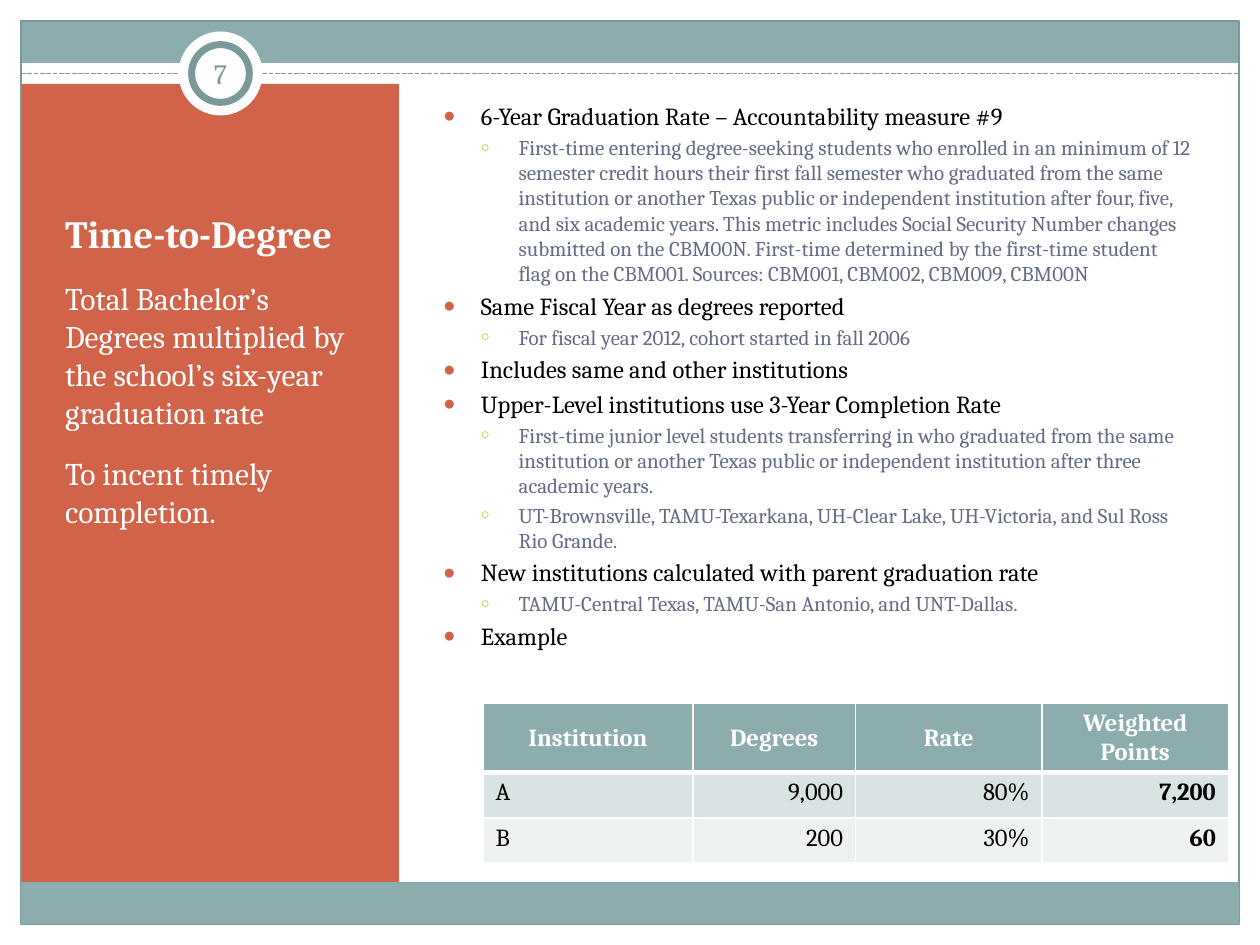
"""Builds the Time-to-Degree slide: caption panel, bulleted notes and an example table."""
import pptx
import pptx.dml.color
import pptx.enum.dml
import pptx.enum.shapes
import pptx.enum.text
import pptx.oxml
import pptx.oxml.ns
import pptx.util

THEME = {
    "font": "Cambria",
    "white": "FFFFFF", "black": "000000", "teal": "8CADAE", "dark teal": "7C999A",
    "orange": "D16349", "gold": "CCB400", "slate": "646B86",
    "rows": ["8CADAE", "DAE3E3", "EEF1F2"],
    "title": 22, "caption": 18, "number": 16, "list": 14, "detail": 12,
}
COLUMNS, ROWS = 120, 90
SHAPE = pptx.enum.shapes.MSO_SHAPE
ALIGN = pptx.enum.text.PP_ALIGN
ANCHOR = pptx.enum.text.MSO_ANCHOR
rgb = pptx.dml.color.RGBColor.from_string

deck = pptx.Presentation()
deck.slide_width = pptx.util.Inches(10)
deck.slide_height = pptx.util.Inches(7.5)
column = deck.slide_width / COLUMNS
row = deck.slide_height / ROWS
page = deck.slides.add_slide(deck.slide_layouts.get_by_name("Content with Caption"))


def grid(left, top, width, height):
    """Turn grid columns and rows into slide lengths."""
    return int(left * column), int(top * row), int(width * column), int(height * row)


def write(para, text, size, color, bold=False):
    """Add one formatted run to a paragraph."""
    span = para.add_run()
    span.text = text
    span.font.name = THEME["font"]
    span.font.size = pptx.util.Pt(size)
    span.font.color.rgb = rgb(THEME[color])
    span.font.bold = bold


shapes = [
    (SHAPE.RECTANGLE, (2, 2, 116, 4), "teal", None, 0),
    (SHAPE.RECTANGLE, (2, 8, 36, 77), "orange", None, 0),
    (SHAPE.RECTANGLE, (2, 2, 116, 86), None, "dark teal", 0.75),
    (SHAPE.OVAL, (17, 3, 8, 8), "white", None, 0),
    (SHAPE.OVAL, (18.25, 4.25, 5.5, 5.5), "white", "dark teal", 4),
    (SHAPE.RECTANGLE, (2, 84, 116, 4), "teal", None, 0),
]
for kind, place, fill, line, width in shapes:
    if kind == SHAPE.OVAL and line is None:
        rule = page.shapes.add_connector(
            pptx.enum.shapes.MSO_CONNECTOR.STRAIGHT,
            int(2 * column), int(7 * row), int(118 * column), int(7 * row))
        rule.line.color.rgb = rgb(THEME["dark teal"])
        rule.line.width = pptx.util.Pt(0.9)
        rule.line.dash_style = pptx.enum.dml.MSO_LINE.SQUARE_DOT
        pptx.oxml.ns.qn("a:effectLst")
        rule.line._get_or_add_ln().getparent().append(
            pptx.oxml.parse_xml(f'<a:effectLst {pptx.oxml.ns.nsdecls("a")}/>'))
    shape = page.shapes.add_shape(kind, *grid(*place))
    shape.shadow.inherit = False
    if fill:
        shape.fill.solid()
        shape.fill.fore_color.rgb = rgb(THEME[fill])
    else:
        shape.fill.background()
    if line:
        shape.line.color.rgb = rgb(THEME[line])
        shape.line.width = pptx.util.Pt(width)
    else:
        shape.line.fill.background()

title, notes, caption = (page.placeholders[index] for index in (0, 1, 2))
places = [
    (title, (5, 12, 31, 13), ANCHOR.BOTTOM),
    (caption, (5, 26, 31, 54.4), ANCHOR.TOP),
    (notes, (41, 9, 74, 71), ANCHOR.TOP),
]
for box, place, anchor in places:
    box.left, box.top, box.width, box.height = grid(*place)
    box.text_frame.word_wrap = True
    box.text_frame.auto_size = pptx.enum.text.MSO_AUTO_SIZE.NONE
    box.text_frame.vertical_anchor = anchor
    page.shapes._spTree.append(box._element)

heading = title.text_frame.paragraphs[0]
heading.alignment = ALIGN.LEFT
write(heading, "Time-to-Degree", THEME["title"], "white", True)

captions = [
    "Total Bachelor’s Degrees multiplied by the school’s six-year graduation rate",
    "To incent timely completion.",
]
for index, text in enumerate(captions):
    para = caption.text_frame.add_paragraph() if index else caption.text_frame.paragraphs[0]
    para.space_before = pptx.util.Pt(0.2 * THEME["caption"])
    para.space_after = pptx.util.Pt(10)
    write(para, text, THEME["caption"], "white")

levels = [
    ("list", "black", "●", "orange", 85),
    ("detail", "slate", "○", "gold", 70),
]
points = [
    (0, "6-Year Graduation Rate – Accountability measure #9"),
    (1, "First-time entering degree-seeking students who enrolled in an minimum of 12 "
        "semester credit hours their first fall semester who graduated from the same "
        "institution or another Texas public or independent institution after four, five, "
        "and six academic years. This metric includes Social Security Number changes "
        "submitted on the CBM00N. First-time determined by the first-time student flag "
        "on the CBM001. Sources: CBM001, CBM002, CBM009, CBM00N"),
    (0, "Same Fiscal Year as degrees reported"),
    (1, "For fiscal year 2012, cohort started in fall 2006"),
    (0, "Includes same and other institutions"),
    (0, "Upper-Level institutions use 3-Year Completion Rate"),
    (1, "First-time junior level students transferring in who graduated from the same "
        "institution or another Texas public or independent institution after three "
        "academic years."),
    (1, "UT-Brownsville, TAMU-Texarkana, UH-Clear Lake, UH-Victoria, and Sul Ross Rio Grande."),
    (0, "New institutions calculated with parent graduation rate"),
    (1, "TAMU-Central Texas, TAMU-San Antonio, and UNT-Dallas."),
    (0, "Example"),
]
indent = pptx.util.Inches(0.3)
for index, (level, text) in enumerate(points):
    size, color, bullet, bullet_color, percent = levels[level]
    para = notes.text_frame.add_paragraph() if index else notes.text_frame.paragraphs[0]
    para.level = level
    para.space_before = pptx.util.Pt(0.2 * THEME[size])
    settings = para._p.get_or_add_pPr()
    settings.set("marL", str(indent * (level + 1)))
    settings.set("indent", str(-indent))
    for tag in (f'buClr {{}}><a:srgbClr val="{THEME[bullet_color]}"/></a:buClr>',
                f'buSzPct {{}} val="{percent}000"/>',
                f'buChar {{}} char="{bullet}"/>'):
        settings.append(pptx.oxml.parse_xml("<a:" + tag.format(pptx.oxml.ns.nsdecls("a"))))
    write(para, text, THEME[size], color)

records = [
    ["Institution", "Degrees", "Rate", "Weighted Points"],
    ["A", "9,000", "80%", "7,200"],
    ["B", "200", "30%", "60"],
]
widths = [20, 15.5, 17.75, 17.75]
heights = [6.24, 4.32, 4.32]
table = page.shapes.add_table(
    len(records), len(widths), *grid(46, 67, sum(widths), sum(heights))).table
for index, width in enumerate(widths):
    table.columns[index].width = int(width * column)
for down, record in enumerate(records):
    table.rows[down].height = int(heights[down] * row)
    header = down == 0
    for across, text in enumerate(record):
        cell = table.cell(down, across)
        cell.fill.solid()
        cell.fill.fore_color.rgb = rgb(THEME["rows"][down])
        cell.vertical_anchor = ANCHOR.MIDDLE if header else ANCHOR.TOP
        for order, side in enumerate("LRTB"):
            thick = (header and side == "B") or (down == 1 and side == "T")
            cell._tc.get_or_add_tcPr().insert(order, pptx.oxml.parse_xml(
                f'<a:ln{side} {pptx.oxml.ns.nsdecls("a")} w="{pptx.util.Pt(3 if thick else 1)}">'
                f'<a:solidFill><a:srgbClr val="{THEME["white"]}"/></a:solidFill></a:ln{side}>'))
        para = cell.text_frame.paragraphs[0]
        para.alignment = ALIGN.CENTER if header else ALIGN.RIGHT if across else ALIGN.LEFT
        write(para, text, THEME["list"], "white" if header else "black", header or across == 3)

number = page.shapes.add_textbox(*grid(18, 4.1, 6, 5.8)).text_frame
number.word_wrap = True
number.vertical_anchor = ANCHOR.MIDDLE
number.margin_left = number.margin_right = pptx.util.Inches(0.05)
number.margin_top = number.margin_bottom = pptx.util.Inches(0.05)
number.paragraphs[0].alignment = ALIGN.CENTER
write(number.paragraphs[0], "7", THEME["number"], "dark teal")

deck.save("out.pptx")
